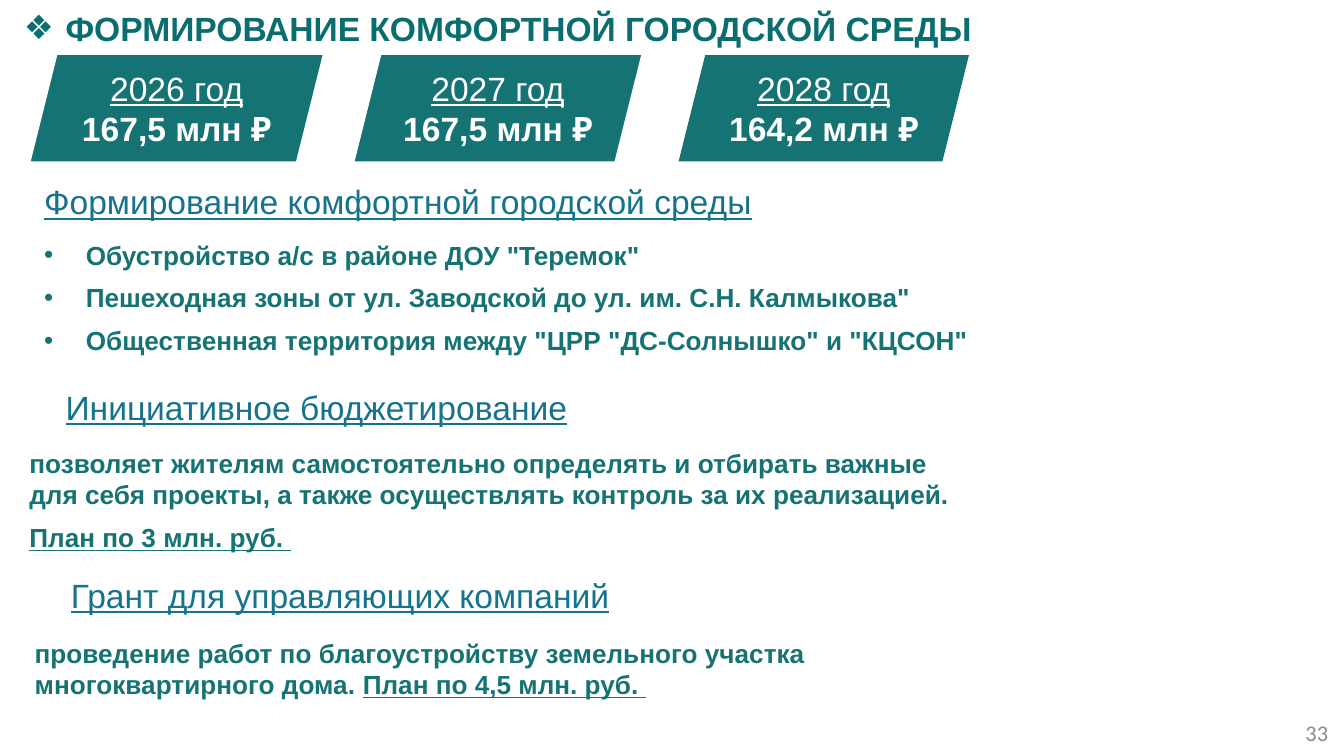
"""Builds the slide on funding for a comfortable urban environment."""
from pptx import Presentation
from pptx.dml.color import RGBColor
from pptx.enum.shapes import MSO_SHAPE
from pptx.enum.text import MSO_ANCHOR, PP_ALIGN
from pptx.oxml.xmlchemy import OxmlElement
from pptx.util import Inches, Pt

COLORS = {
    "teal": "167373",
    "title": "0A6E6E",
    "heading": "16738C",
    "white": "FFFFFF",
    "grey": "8C8C8C",
}
TITLE = "ФОРМИРОВАНИЕ КОМФОРТНОЙ ГОРОДСКОЙ СРЕДЫ"
YEARS = [
    ("2026 год ", "167,5 млн ₽", 2.17),
    ("2027 год ", "167,5 млн ₽", 2.13),
    ("2028 год ", "164,2 млн ₽", 2.16),
]
YEAR_LEFT, YEAR_STEP = 0.23, 2.41
HEADINGS = [
    ("Формирование комфортной городской среды", 0.23, 1.3),
    ("Инициативное бюджетирование", 0.39, 2.83),
    ("Грант для управляющих компаний", 0.43, 4.23),
]
PLACES = [
    'Обустройство а/с в районе ДОУ "Теремок"',
    'Пешеходная зоны от ул. Заводской до ул. им. С.Н. Калмыкова"',
    'Общественная территория между "ЦРР "ДС-Солнышко" и "КЦСОН"',
]
DETAILS = [
    ((0.12, 3.28, 7.09, 0.89), [
        [("позволяет жителям самостоятельно определять и отбирать важные для себя "
          "проекты, а также осуществлять контроль за их реализацией.", False)],
        [("План по 3 млн. руб. ", True)],
    ]),
    ((0.16, 4.69, 7.09, 0.57), [
        [("проведение работ по благоустройству земельного участка "
          "многоквартирного дома. ", False), ("План по 4,5 млн. руб. ", True)],
    ]),
]
PAGE_NUMBER = "33"


def add_bullet(paragraph, symbol):
    properties = paragraph._p.get_or_add_pPr()
    properties.set("marL", str(Inches(0.31)))
    properties.set("indent", str(-Inches(0.31)))
    font = OxmlElement("a:buFont")
    font.set("typeface", "Arial")
    mark = OxmlElement("a:buChar")
    mark.set("char", symbol)
    properties.extend([font, mark])


def add_text(page, place, paragraphs, shape=None, fill=None, size=14, color="teal",
             font="Arial", bullet=None, align=PP_ALIGN.LEFT, anchor=MSO_ANCHOR.TOP):
    """Adds paragraphs, each a list of (text, bold, underline) spans."""
    bounds = [Inches(value) for value in place]
    if shape is None:
        box = page.shapes.add_textbox(*bounds)
    else:
        box = page.shapes.add_shape(shape, *bounds)
        box.shadow.inherit = False
        box.fill.solid()
        box.fill.fore_color.rgb = RGBColor.from_string(COLORS[fill])
        box.line.fill.background()
    frame = box.text_frame
    frame.word_wrap = True
    frame.vertical_anchor = anchor
    for index, spans in enumerate(paragraphs):
        paragraph = frame.add_paragraph() if index else frame.paragraphs[0]
        paragraph.alignment = align
        if index:
            paragraph.space_before = Pt(6)
        if bullet:
            add_bullet(paragraph, bullet)
        for text, bold, underline in spans:
            span = paragraph.add_run()
            span.text = text
            span.font.name = font
            span.font.size = Pt(size)
            span.font.bold = bold
            span.font.underline = underline
            span.font.color.rgb = RGBColor.from_string(COLORS[color])


def main():
    deck = Presentation()
    deck.slide_width = Inches(10)
    deck.slide_height = deck.slide_width * 9 // 16
    page = deck.slides.add_slide(deck.slide_layouts[6])

    add_text(page, (9.49, 5.3, 0.49, 0.3), [[(PAGE_NUMBER, False, False)]], size=12,
             color="grey", font="Calibri", align=PP_ALIGN.RIGHT, anchor=MSO_ANCHOR.MIDDLE)
    add_text(page, (0.23, 1.73, 7.21, 0.98), [[(place, True, False)] for place in PLACES],
             bullet="•")
    for place, paragraphs in DETAILS:
        spans = [[(text, True, underline) for text, underline in paragraph]
                 for paragraph in paragraphs]
        add_text(page, place, spans, shape=MSO_SHAPE.RECTANGLE, fill="white")
    add_text(page, (0.08, 0.01, 9.92, 0.4), [[(TITLE, True, False)]], size=18,
             color="title", bullet="❖")
    for index, (year, amount, width) in enumerate(YEARS):
        add_text(page, (YEAR_LEFT + index * YEAR_STEP, 0.41, width, 0.79),
                 [[(year, False, True), (amount, True, False)]],
                 shape=MSO_SHAPE.PARALLELOGRAM, fill="teal", size=18, color="white",
                 align=PP_ALIGN.CENTER, anchor=MSO_ANCHOR.MIDDLE)
    for heading, left, top in HEADINGS:
        add_text(page, (left, top, 5.56, 0.4), [[(heading, False, True)]], size=18,
                 color="heading")
    deck.save("out.pptx")


if __name__ == "__main__":
    main()
